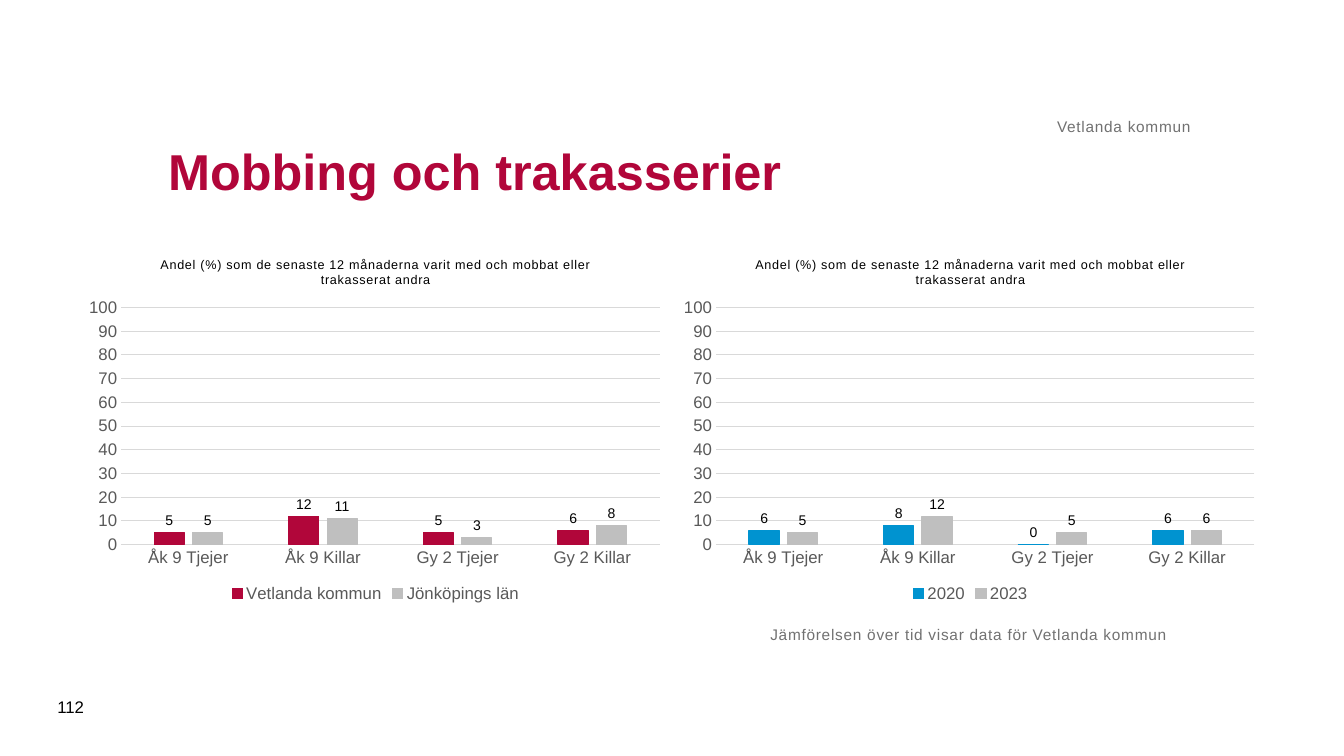
import pptx
import pptx.chart.data
import pptx.dml.color
import pptx.enum.chart
import pptx.enum.text
import pptx.oxml
import pptx.util
from pptx.oxml.ns import nsdecls, qn

# Content
COLORS = {"red": "B1063A", "blue": "0093D0", "silver": "BFBFBF", "grid": "D9D9D9",
          "axis": "595959", "note": "717171", "black": "000000"}
FONT = "Arial"
NUMBER_FORMAT = "#,##0;#,##0"
QUESTION = "Andel (%) som de senaste 12 månaderna varit med och mobbat eller trakasserat andra"
GROUPS = ["Åk 9 Tjejer", "Åk 9 Killar", "Gy 2 Tjejer", "Gy 2 Killar"]
COMPARISONS = [
    [("Vetlanda kommun", (5, 12, 5, 6), "red"), ("Jönköpings län", (5, 11, 3, 8), "silver")],
    [("2020", (6, 8, 0, 6), "blue"), ("2023", (5, 12, 5, 6), "silver")],
]
TOP, MIDDLE, BOTTOM = (pptx.enum.text.MSO_ANCHOR.TOP, pptx.enum.text.MSO_ANCHOR.MIDDLE,
                       pptx.enum.text.MSO_ANCHOR.BOTTOM)
LEFT, RIGHT = pptx.enum.text.PP_ALIGN.LEFT, pptx.enum.text.PP_ALIGN.RIGHT
# text, box, size, colour, bold, anchor, alignment, inset, letter spacing (1/100 pt)
TEXTS = [
    ("Mobbing och trakasserier", (1.57, 0.98, 10.24, 1.42), 36, "red", True, MIDDLE, LEFT, 0.1, 0),
    ("Jämförelsen över tid visar data för Vetlanda kommun", (7.64, 6.2, 5.31, 0.94),
     11, "note", False, TOP, LEFT, 0, 50),
    ("Vetlanda kommun", (1.57, 0.62, 10.24, 0.73), 11, "note", False, BOTTOM, RIGHT, 0, 50),
    ("112", (0.47, 6.81, 0.57, 0.4), 12, "black", False, MIDDLE, LEFT, 0.1, 0),
]

# Chart row: two equal columns with a narrow gap
CHART_LEFT, CHART_TOP, CHART_WIDTH, CHART_HEIGHT, CHART_GAP = 0.79, 2.4, 5.87, 3.62, 0.03
PLOT_SHARES = {"x": 0.07, "y": 0.18, "w": 0.91, "h": 0.65}


def rgb(name):
    return pptx.dml.color.RGBColor.from_string(COLORS[name])


def style_font(font, size, color, bold=False):
    font.name, font.size, font.bold = FONT, pptx.util.Pt(size), bold
    font.color.rgb = rgb(color)


def style_line(line, color):
    line.color.rgb = rgb(color)
    line.width = pptx.util.Pt(0.75)


def space_letters(paragraph, spacing):
    for run in paragraph.runs:
        run.font._element.set("spc", str(spacing))


def add_text(slide, text, box, size, color, bold, anchor, align, inset, spacing):
    frame = slide.shapes.add_textbox(*map(pptx.util.Inches, box)).text_frame
    frame.word_wrap = True
    frame.vertical_anchor = anchor
    frame.margin_left = frame.margin_right = pptx.util.Inches(inset)
    frame.margin_top = frame.margin_bottom = pptx.util.Inches(inset / 2)
    paragraph = frame.paragraphs[0]
    paragraph.text = text
    paragraph.alignment = align
    style_font(paragraph.font, size, color, bold)
    if spacing:
        space_letters(paragraph, spacing)


def place_plot(chart):
    plot_area = chart._chartSpace.chart.plotArea
    for layout in plot_area.findall(qn("c:layout")):
        plot_area.remove(layout)
    shares = "".join(f'<c:{key} val="{share}"/>' for key, share in PLOT_SHARES.items())
    plot_area.insert(0, pptx.oxml.parse_xml(
        f'<c:layout {nsdecls("c")}><c:manualLayout><c:layoutTarget val="inner"/>'
        f'<c:xMode val="edge"/><c:yMode val="edge"/>{shares}</c:manualLayout></c:layout>'))


def add_comparison(slide, column, comparison):
    data = pptx.chart.data.CategoryChartData(number_format=NUMBER_FORMAT)
    data.categories = GROUPS
    for name, values, _ in comparison:
        data.add_series(name, values)
    left = CHART_LEFT + column * (CHART_WIDTH + CHART_GAP)
    box = map(pptx.util.Inches, (left, CHART_TOP, CHART_WIDTH, CHART_HEIGHT))
    chart = slide.shapes.add_chart(
        pptx.enum.chart.XL_CHART_TYPE.COLUMN_CLUSTERED, *box, data).chart
    style_font(chart.font, 10, "black")
    place_plot(chart)

    # Question and legend
    chart.has_title = True
    question = chart.chart_title.text_frame.paragraphs[0]
    question.text = QUESTION
    style_font(question.font, 9, "black")
    space_letters(question, 50)
    chart.has_legend = True
    chart.legend.position = pptx.enum.chart.XL_LEGEND_POSITION.BOTTOM
    chart.legend.include_in_layout = False
    style_font(chart.legend.font, 12, "axis")

    # Axes
    percent = chart.value_axis
    for axis in (chart.category_axis, percent):
        axis.major_tick_mark = axis.minor_tick_mark = pptx.enum.chart.XL_TICK_MARK.NONE
        style_font(axis.tick_labels.font, 12, "axis")
    style_line(chart.category_axis.format.line, "grid")
    percent.minimum_scale, percent.maximum_scale, percent.major_unit = 0, 100, 10
    percent.tick_labels.number_format = NUMBER_FORMAT
    percent.tick_labels.number_format_is_linked = False
    percent.format.line.fill.background()
    style_line(percent.major_gridlines.format.line, "grid")

    # Columns and their values
    plot = chart.plots[0]
    plot.gap_width, plot.overlap, plot.vary_by_categories = 219, -27, False
    for series, (_, _, color) in zip(plot.series, comparison):
        series.invert_if_negative = False
        series.format.fill.solid()
        series.format.fill.fore_color.rgb = rgb(color)
        style_line(series.format.line, color)
        labels = series.data_labels
        labels.show_value = True
        labels.position = pptx.enum.chart.XL_LABEL_POSITION.OUTSIDE_END
        labels.number_format = NUMBER_FORMAT
        labels.number_format_is_linked = False
        style_font(labels.font, 10, "black")


def main():
    deck = pptx.Presentation()
    deck.slide_width, deck.slide_height = pptx.util.Inches(13.33), pptx.util.Inches(7.5)
    slide = deck.slides.add_slide(deck.slide_layouts[6])
    for column, comparison in enumerate(COMPARISONS):
        add_comparison(slide, column, comparison)
    for text in TEXTS:
        add_text(slide, *text)
    deck.save("out.pptx")


if __name__ == "__main__":
    main()
